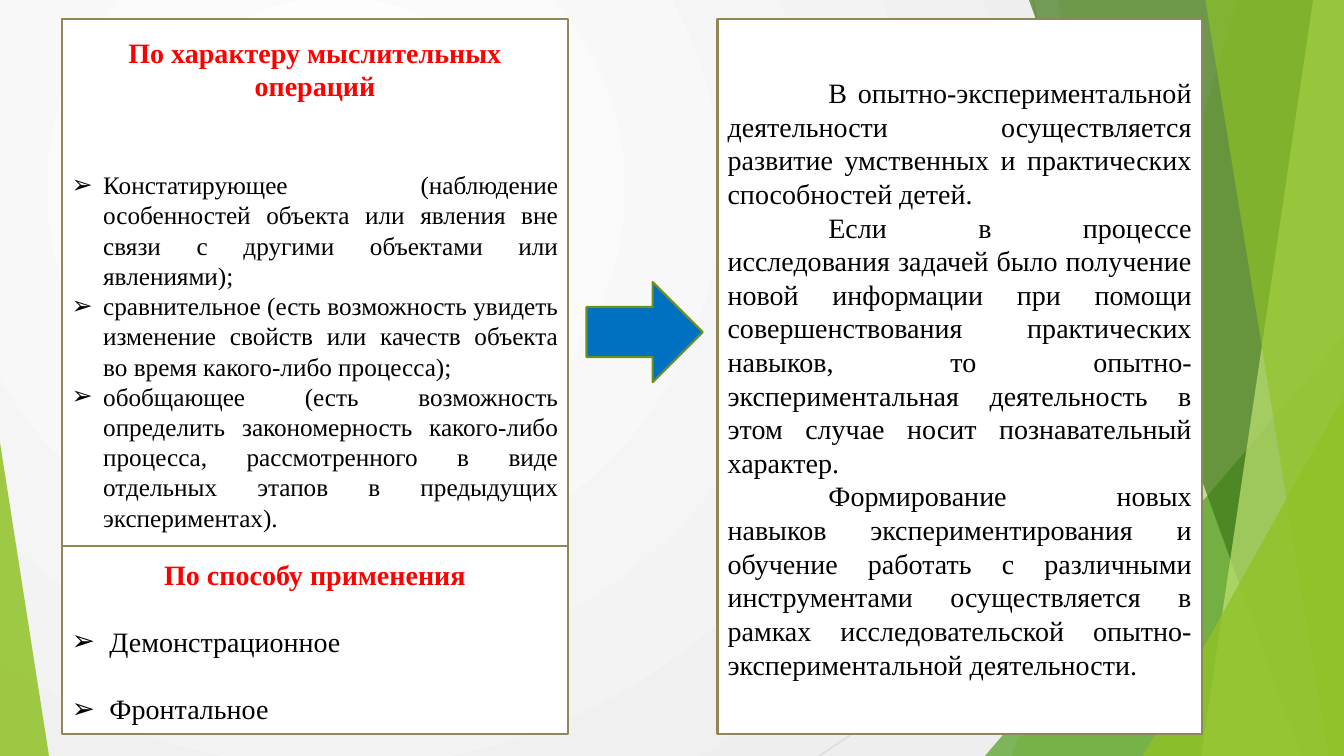
import pptx
import pptx.util
import pptx.dml.color
import pptx.enum.dml
import pptx.enum.shapes
import pptx.enum.text
import pptx.oxml.ns
import pptx.oxml.xmlchemy
import lxml.etree

Pt = pptx.util.Pt
qn = pptx.oxml.ns.qn
Shape = pptx.enum.shapes.MSO_SHAPE
Align = pptx.enum.text.PP_ALIGN

WIDE, HIGH = 960, 540
HUES = {
    "white": "FFFFFF", "mist": "EEEEEE", "black": "000000", "red": "FF0000",
    "blue": "0070C0", "edge": "918655", "moss": "6B901C", "lime": "90C226",
    "leaf": "54A021", "pine": "3F7819", "pale": "C0E474",
    "gray": "BFBFBF", "ash": "D9D9D9",
}


class Deck:
    face = "Times New Roman"

    def __init__(self):
        self.file = pptx.Presentation()
        self.file.slide_width = Pt(WIDE)
        self.file.slide_height = Pt(HIGH)
        self.slide = self.file.slides.add_slide(self.file.slide_layouts[4])
        self.shapes = self.slide.shapes
        self.slots = {s.placeholder_format.idx: s for s in self.slide.placeholders}

    def hue(self, name):
        return pptx.dml.color.RGBColor.from_string(HUES[name])

    def back(self, inner, outer):
        fill = self.slide.background.fill
        fill.gradient()
        for stop, name in zip(fill.gradient_stops, (inner, outer)):
            stop.color.rgb = self.hue(name)
        grad = next(self.slide.element.iter(qn("a:gradFill")))
        for old in grad.findall(qn("a:lin")):
            grad.remove(old)
        ring = lxml.etree.SubElement(grad, qn("a:path"), path="circle")
        lxml.etree.SubElement(ring, qn("a:fillToRect"),
                              l="50000", t="50000", r="100000", b="100000")

    def line(self, start, end, name):
        wire = self.shapes.add_connector(
            pptx.enum.shapes.MSO_CONNECTOR.STRAIGHT, *map(Pt, start + end))
        wire.line.color.rgb = self.hue(name)
        wire.line.width = Pt(0.75)
        lxml.etree.SubElement(wire.element.spPr, qn("a:effectLst"))

    def paint(self, shape, name, alpha=100, edge=None):
        shape.fill.solid()
        shape.fill.fore_color.rgb = self.hue(name)
        if alpha < 100:
            tint = next(shape.element.spPr.iter(qn("a:srgbClr")))
            lxml.etree.SubElement(tint, qn("a:alpha"), val=str(alpha * 1000))
        if edge:
            shape.line.color.rgb = self.hue(edge)
            shape.line.width = Pt(1.5)
        else:
            shape.line.fill.background()

    def shard(self, top, foot, name, alpha):
        pen = self.shapes.build_freeform(Pt(top), 0)
        pen.add_line_segments([(Pt(WIDE), 0), (Pt(WIDE), Pt(HIGH)), (Pt(foot), Pt(HIGH))])
        shape = pen.convert_to_shape()
        shape.shadow.inherit = False
        self.paint(shape, name, alpha)

    def form(self, kind, box, name, alpha=100, edge=None, tip=None):
        shape = self.shapes.add_shape(kind, *map(Pt, box))
        shape.shadow.inherit = False
        if tip is not None:
            shape.adjustments[0] = tip
        self.paint(shape, name, alpha, edge)

    def slot(self, idx, box, inset=0):
        shape = self.slots.pop(idx)
        self.shapes.element.append(shape.element)
        shape.left, shape.top, shape.width, shape.height = map(Pt, box)
        frame = shape.text_frame
        frame.word_wrap = True
        frame.auto_size = pptx.enum.text.MSO_AUTO_SIZE.NONE
        frame.vertical_anchor = pptx.enum.text.MSO_ANCHOR.TOP
        frame.margin_left = frame.margin_right = Pt(7.2)
        frame.margin_top, frame.margin_bottom = Pt(inset), 0
        return shape

    def panel(self, idx, box, inset):
        shape = self.slot(idx, box, inset)
        self.paint(shape, "white", edge="edge")
        return shape.text_frame

    def text(self, frame, words, size=20, name="black", bold=False,
             align=Align.JUSTIFY, hang=0, first=0, gap=0):
        para = frame.paragraphs[0]
        if para.runs:
            para = frame.add_paragraph()
        para.add_run().text = words
        props = para._p.get_or_add_pPr()
        props.set("marL", str(Pt(hang)))
        props.set("indent", str(Pt(first - hang)))
        if hang:
            lxml.etree.SubElement(props, qn("a:buChar"), char="➢")
        else:
            lxml.etree.SubElement(props, qn("a:buNone"))
        para.alignment = align
        para.line_spacing = Pt(size * 1.2)
        para.space_before, para.space_after = Pt(gap), Pt(0)
        para.font.name = self.face
        para.font.size = Pt(size)
        para.font.bold = bold
        para.font.color.rgb = self.hue(name)

    def head(self, frame, words):
        self.text(frame, words, name="red", bold=True, align=Align.CENTER)

    def save(self):
        for shape in self.slots.values():
            self.shapes.element.remove(shape.element)
        self.file.save("out.pptx")


def main():
    deck = Deck()
    deck.back("white", "mist")
    deck.line((738, 0), (834, HIGH), "gray")
    deck.line((WIDE, 290), (585, HIGH), "ash")
    deck.shard(884, 723, "lime", 30)
    deck.shard(756, 852, "lime", 20)
    deck.form(Shape.ISOSCELES_TRIANGLE, (703.5, 240, 256.5, 300), "leaf", 72, tip=1)
    deck.shard(735, 929.5, "pine", 70)
    deck.shard(938, 858, "pale", 70)
    deck.shard(861, 949, "lime", 65)
    deck.form(Shape.ISOSCELES_TRIANGLE, (816.5, 283, 143.5, 257), "lime", 80, tip=1)
    deck.form(Shape.ISOSCELES_TRIANGLE, (0, 316, 35, 224), "lime", 85, tip=0)

    left, top, wide, split, foot = 44, 13.5, 362, 390, 524.5
    kinds = deck.panel(1, (left, top, wide, split - top), 107.5)
    for words in (
        "Констатирующее (наблюдение особенностей объекта или явления вне связи с другими объектами или явлениями);",
        "сравнительное (есть возможность увидеть изменение свойств или качеств объекта во время какого-либо процесса);",
        "обобщающее (есть возможность определить закономерность какого-либо процесса, рассмотренного в виде отдельных этапов в предыдущих экспериментах).",
    ):
        deck.text(kinds, words, size=18, hang=22.5)
    title = deck.slot(0, (left, 25, wide, 48))
    deck.head(title.text_frame, "По характеру мыслительных операций")

    modes = deck.panel(2, (left, split, wide, foot - split), 8)
    deck.head(modes, "По способу применения")
    for words in ("Демонстрационное", "Фронтальное"):
        deck.text(modes, words, hang=27, gap=24)

    goals = deck.panel(4, (512.5, top, 346, foot - top), 40.5)
    for words in (
        "В опытно-экспериментальной деятельности осуществляется развитие умственных и практических способностей детей.",
        "Если в процессе исследования задачей было получение новой информации при помощи совершенствования практических навыков, то опытно-экспериментальная деятельность в этом случае носит познавательный характер.",
        "Формирование новых навыков экспериментирования и обучение работать с различными инструментами осуществляется в рамках исследовательской опытно-экспериментальной деятельности.",
    ):
        deck.text(goals, words, first=72)

    deck.form(Shape.RIGHT_ARROW, (419, 201.5, 83, 71.5), "blue", edge="moss")
    deck.save()


if __name__ == "__main__":
    main()
